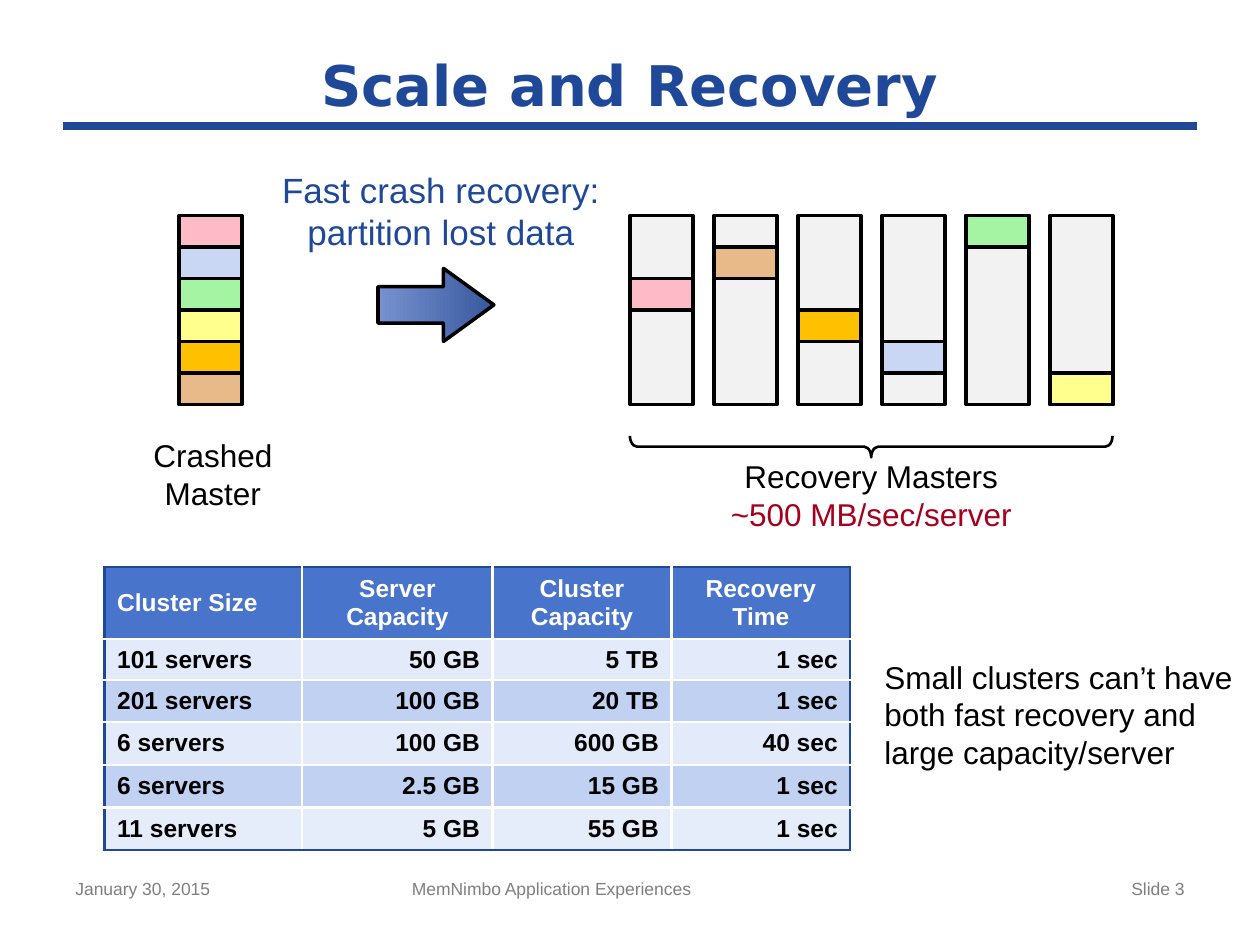
from copy import deepcopy

from lxml import etree
from pptx import Presentation
from pptx.dml.color import RGBColor
from pptx.enum.shapes import MSO_CONNECTOR, MSO_SHAPE
from pptx.enum.text import MSO_ANCHOR, MSO_AUTO_SIZE, PP_ALIGN
from pptx.oxml.ns import qn
from pptx.util import Inches, Pt

LEFT, CENTER, RIGHT = PP_ALIGN.LEFT, PP_ALIGN.CENTER, PP_ALIGN.RIGHT
TOP, MIDDLE = MSO_ANCHOR.TOP, MSO_ANCHOR.MIDDLE
RECT, ARROW, BRACE = MSO_SHAPE.RECTANGLE, MSO_SHAPE.RIGHT_ARROW, MSO_SHAPE.LEFT_BRACE

THEME = {
    "blue": "1F4899", "black": "000000", "white": "FFFFFF", "red": "A5001E",
    "gray": "7F7F7F", "server": "F2F2F2", "header": "4974CB",
    "bands": ["E3EAF9", "C0D1F2", "E3EAF9", "C0D1F2", "E6EDFA"],
    "arrow": ["38589E", "7792CF"],
    "font": "Arial", "title_font": "DejaVu Sans",
    "title": 32, "callout": 20, "label": 18, "table": 14, "footer": 10,
    "outline": 2, "brace": 1.5, "border": 1.5, "rule": 4.5,
}

# Colour of each lost partition, from the top of the crashed master down
PARTITIONS = {"pink": "FFBAC7", "blue": "C9D7F4", "green": "A4F4A4",
              "yellow": "FFFF8D", "gold": "FFC000", "tan": "E8B989"}
# Partition held by each recovery master, and the slot it sits in
RECOVERY = [("pink", 2), ("tan", 1), ("gold", 3), ("blue", 4), ("green", 0), ("yellow", 5)]

# Text, box (left, top, width, height), size, colour, alignment, wrap
LABELS = [
    ("Crashed\nMaster", (1.11, 3.41, 1.16, 0.71), "label", "black", CENTER, False),
    ("Recovery Masters\n|~500 MB/sec/server", (5.5, 3.58, 2.83, 0.71), "label", "black", CENTER, True),
    ("Fast crash recovery:\npartition lost data", (2, 1.29, 3, 0.77), "callout", "blue", CENTER, True),
    ("Small clusters can’t have\nboth fast recovery and\nlarge capacity/server",
     (6.92, 5.17, 2.99, 1.01), "label", "black", LEFT, False),
    ("January 30, 2015", (0.5, 6.92, 2.33, 0.43), "footer", "gray", LEFT, True),
    ("MemNimbo Application Experiences", (3.17, 6.92, 3.75, 0.43), "footer", "gray", LEFT, True),
    ("Slide 3", (7.17, 6.92, 2.33, 0.43), "footer", "gray", RIGHT, True),
]

TABLE = [
    ["Cluster Size", "Server\nCapacity", "Cluster\nCapacity", "Recovery\nTime"],
    ["101 servers", "50 GB", "5 TB", "1 sec"],
    ["201 servers", "100 GB", "20 TB", "1 sec"],
    ["6 servers", "100 GB", "600 GB", "40 sec"],
    ["6 servers", "2.5 GB", "15 GB", "1 sec"],
    ["11 servers", "5 GB", "55 GB", "1 sec"],
]
COLUMNS = [1.57, 1.51, 1.42, 1.42]
ROWS = [0.57, 0.33, 0.33, 0.34, 0.34, 0.34]

SLOT_W, SLOT_H, STACK_TOP = 0.5, 0.25, 1.71
CRASHED_LEFT, RECOVERY_LEFT, RECOVERY_STEP = 1.42, 5, 2 / 3


def rgb(value):
    return RGBColor.from_string(value)


def inches(box):
    return [Inches(v) for v in box]


def write(tf, text, size, colors, align, font=THEME["font"], bold=False):
    """Fill one paragraph: a newline breaks the line, a bar moves to the next colour."""
    p = tf.paragraphs[0]
    p.alignment = align
    for part, color in zip(text.split("|"), colors):
        for i, line in enumerate(part.split("\n")):
            if i:
                p.add_line_break()
            if not line:
                continue
            r = p.add_run()
            r.text = line
            for name, value in {"name": font, "size": Pt(size), "bold": bold}.items():
                setattr(r.font, name, value)
            r.font.color.rgb = rgb(color)
    # Line breaks carry the text's own size so that they do not stretch the line
    for br in p._p.findall(qn("a:br")):
        br.append(deepcopy(p.runs[0]._r.rPr))


def add_text(s, text, box, size, colors, align, wrap=True, anchor=TOP, grow=False, **style):
    tf = s.shapes.add_textbox(*inches(box)).text_frame
    formats = {"word_wrap": wrap, "vertical_anchor": anchor,
               "auto_size": MSO_AUTO_SIZE.SHAPE_TO_FIT_TEXT if grow else MSO_AUTO_SIZE.NONE}
    for name, value in formats.items():
        setattr(tf, name, value)
    write(tf, text, size, colors, align, **style)


def add_shape(s, kind, box, fill=None, width=THEME["outline"]):
    sp = s.shapes.add_shape(kind, *inches(box))
    sp.shadow.inherit = False
    sp.line.color.rgb = rgb(THEME["black"])
    sp.line.width = Pt(width)
    if fill:
        sp.fill.solid()
        sp.fill.fore_color.rgb = rgb(fill)
    else:
        sp.fill.background()
    return sp


def add_slot(s, left, slot, fill, slots=1):
    add_shape(s, RECT, (left, STACK_TOP + slot * SLOT_H, SLOT_W, slots * SLOT_H), fill)


def add_title(s):
    add_text(s, "Scale and Recovery", (0.5, 0.33, 9, 0.67), THEME["title"], [THEME["blue"]],
             CENTER, anchor=MIDDLE, font=THEME["title_font"], bold=True)
    rule = s.shapes.add_connector(MSO_CONNECTOR.STRAIGHT, *inches((0.5, 1, 9.5, 1)))
    rule.line.color.rgb = rgb(THEME["blue"])
    rule.line.width = Pt(THEME["rule"])
    etree.SubElement(rule._element.spPr, qn("a:effectLst"))


def add_diagram(s):
    for slot, color in enumerate(PARTITIONS.values()):
        add_slot(s, CRASHED_LEFT, slot, color)
    for i, (name, slot) in enumerate(RECOVERY):
        left = RECOVERY_LEFT + i * RECOVERY_STEP
        add_slot(s, left, 0, THEME["server"], len(PARTITIONS))
        add_slot(s, left, slot, PARTITIONS[name])

    brace = add_shape(s, BRACE, (6.83, 1.63, 0.17, 3.83), width=THEME["brace"])
    brace.rotation = 270
    brace.adjustments[0] = 0.33

    arrow = add_shape(s, ARROW, (3, 2.13, 0.92, 0.58))
    arrow.adjustments[1] = 0.69
    arrow.fill.gradient()
    arrow.fill.gradient_angle = 180
    for stop, color in zip(arrow.fill.gradient_stops, THEME["arrow"]):
        stop.color.rgb = rgb(color)


def set_borders(cell, outer):
    """Draw four borders; outer tells which of left, right, top, bottom lie on the table edge."""
    tc_pr = cell._tc.get_or_add_tcPr()
    for i, (side, is_outer) in enumerate(zip("LRTB", outer)):
        ln = etree.Element(qn("a:ln" + side), w=str(Pt(THEME["border"])))
        fill = etree.SubElement(ln, qn("a:solidFill"))
        etree.SubElement(fill, qn("a:srgbClr"), val=THEME["blue" if is_outer else "white"])
        tc_pr.insert(i, ln)


def add_cluster_table(s):
    box = inches((0.83, 4.5, sum(COLUMNS), sum(ROWS)))
    table = s.shapes.add_table(len(ROWS), len(COLUMNS), *box).table
    for column, width in zip(table.columns, COLUMNS):
        column.width = Inches(width)
    for row, height in zip(table.rows, ROWS):
        row.height = Inches(height)
    fills = [THEME["header"]] + THEME["bands"]
    for r, values in enumerate(TABLE):
        for c, text in enumerate(values):
            cell = table.cell(r, c)
            cell.vertical_anchor = MIDDLE
            cell.fill.solid()
            cell.fill.fore_color.rgb = rgb(fills[r])
            align = LEFT if c == 0 else RIGHT if r else CENTER
            color = THEME["black" if r else "white"]
            write(cell.text_frame, text, THEME["table"], [color], align, bold=True)
            set_borders(cell, (c == 0, c == len(COLUMNS) - 1, r == 0, r == len(ROWS) - 1))


def main():
    prs = Presentation()
    prs.slide_width, prs.slide_height = Inches(10), Inches(7.5)
    s = prs.slides.add_slide(prs.slide_layouts[6])
    add_title(s)
    add_diagram(s)
    add_cluster_table(s)
    for text, box, size, color, align, wrap in LABELS:
        add_text(s, text, box, THEME[size], [THEME[color], THEME["red"]], align, wrap,
                 grow=size != "footer")
    prs.save("out.pptx")


if __name__ == "__main__":
    main()
